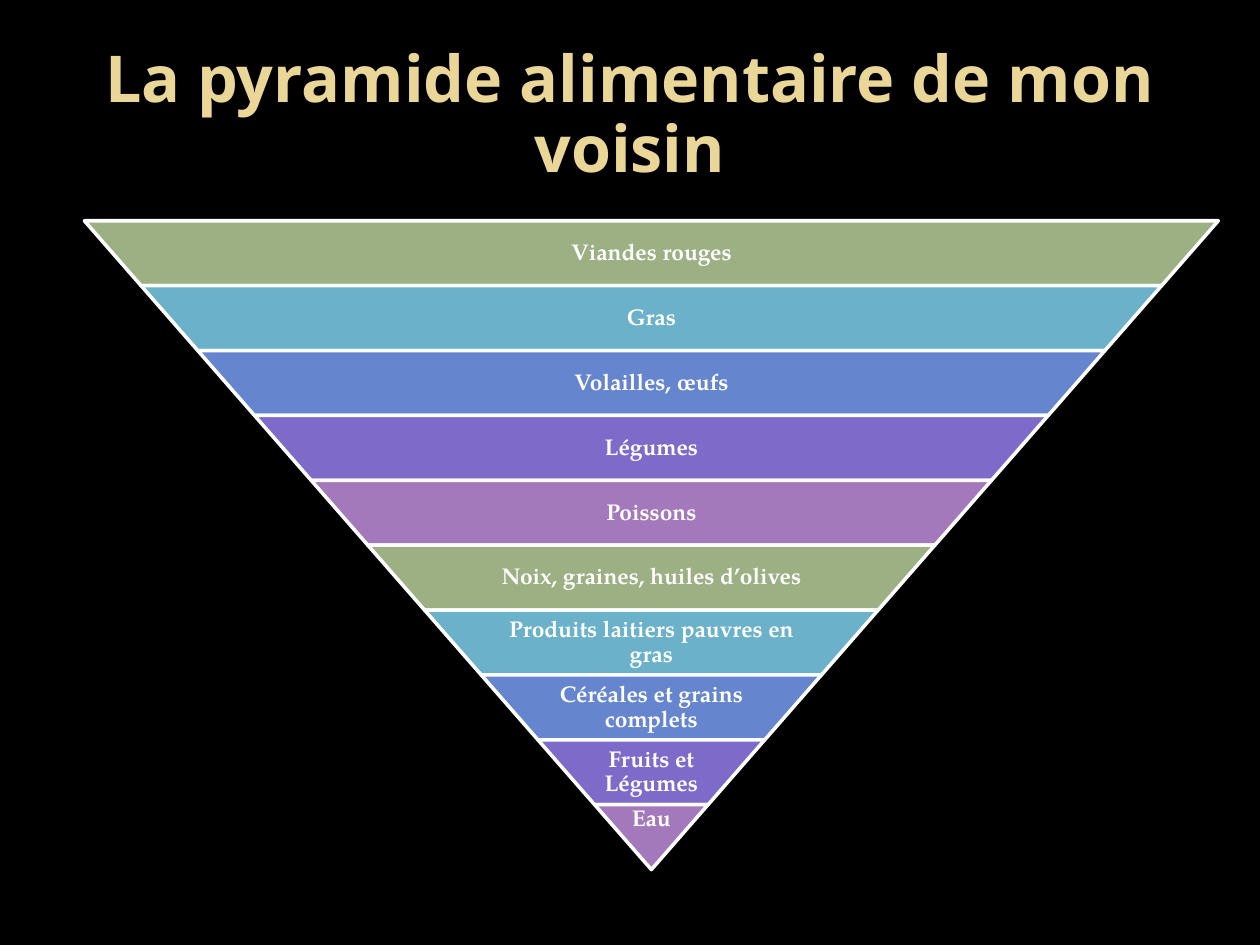
from dataclasses import dataclass

from pptx import Presentation
from pptx.dml.color import RGBColor
from pptx.enum.shapes import MSO_SHAPE
from pptx.enum.text import MSO_ANCHOR, PP_ALIGN
from pptx.util import Cm, Pt


@dataclass(frozen=True)
class Theme:
    background: str = "000000"
    title_color: str = "EAD696"
    text_color: str = "FFFFFF"
    tier_colors: tuple = ("9CB084", "6BB1C9", "6585CF", "7E6BC9", "A379BB")
    title_font: str = "Open Sans"
    tier_font: str = "TeX Gyre Pagella"
    title_size: float = 36.9
    tier_size: float = 13
    outline: float = 2


class SlideBuilder:
    def __init__(self, page, theme):
        self.page = page
        self.theme = theme

    def background(self):
        fill = self.page.background.fill
        fill.solid()
        fill.fore_color.rgb = RGBColor.from_string(self.theme.background)

    def text(self, words, left, top, width, height, font, size, color,
             margins, anchor=MSO_ANCHOR.MIDDLE):
        box = self.page.shapes.add_textbox(Cm(left), Cm(top), Cm(width), Cm(height))
        frame = box.text_frame
        frame.word_wrap = True
        frame.vertical_anchor = anchor
        frame.margin_left = frame.margin_right = Cm(margins[0])
        frame.margin_top = frame.margin_bottom = Cm(margins[1])
        para = frame.paragraphs[0]
        para.text = words
        para.alignment = PP_ALIGN.CENTER
        para.line_spacing = 0.9
        para.font.name = font
        para.font.size = Pt(size)
        para.font.bold = True
        para.font.color.rgb = RGBColor.from_string(color)

    def title(self, words, left, top, width, height):
        theme = self.theme
        self.text(words, left, top, width, height, theme.title_font,
                  theme.title_size, theme.title_color, (0.25, 0.13))

    def tier(self, left, top, width, height, slant, color):
        shape = self.page.shapes.add_shape(
            MSO_SHAPE.TRAPEZOID, Cm(left), Cm(top), Cm(width), Cm(height))
        shape.adjustments[0] = slant / height
        shape.rotation = 180
        shape.shadow.inherit = False
        shape.fill.solid()
        shape.fill.fore_color.rgb = RGBColor.from_string(color)
        shape.line.color.rgb = RGBColor.from_string(self.theme.text_color)
        shape.line.width = Pt(self.theme.outline)

    def pyramid(self, labels, left, top, width, height):
        """Stack the labels as tiers that narrow evenly to a point."""
        theme = self.theme
        tier_height = height / len(labels)
        slant = width / 2 / len(labels)
        for index, label in enumerate(labels):
            tier_left = left + index * slant
            tier_top = top + index * tier_height
            tier_width = width - 2 * index * slant
            color = theme.tier_colors[index % len(theme.tier_colors)]
            self.tier(tier_left, tier_top, tier_width, tier_height, slant, color)

            # The tip uses its full width, with the label near its wide edge
            is_tip = index == len(labels) - 1
            text_width = tier_width * (1 if is_tip else 0.65)
            self.text(label, left + (width - text_width) / 2, tier_top,
                      text_width, tier_height, theme.tier_font, theme.tier_size,
                      theme.text_color, (0.05, 0.05),
                      MSO_ANCHOR.TOP if is_tip else MSO_ANCHOR.MIDDLE)


def main():
    deck = Presentation()
    deck.slide_width, deck.slide_height = Cm(25.4), Cm(19.05)
    builder = SlideBuilder(deck.slides.add_slide(deck.slide_layouts[6]), Theme())
    builder.background()

    # Title
    builder.title("La pyramide alimentaire de mon voisin", 1.27, 0.76, 22.86, 3.18)

    # Inverted food pyramid, from the widest tier to the tip
    foods = (
        "Viandes rouges",
        "Gras",
        "Volailles, œufs",
        "Légumes",
        "Poissons",
        "Noix, graines, huiles d’olives",
        "Produits laitiers pauvres en gras",
        "Céréales et grains complets",
        "Fruits et Légumes",
        "Eau",
    )
    builder.pyramid(foods, 1.7, 4.45, 22.86, 13.08)

    deck.save("out.pptx")


if __name__ == "__main__":
    main()
